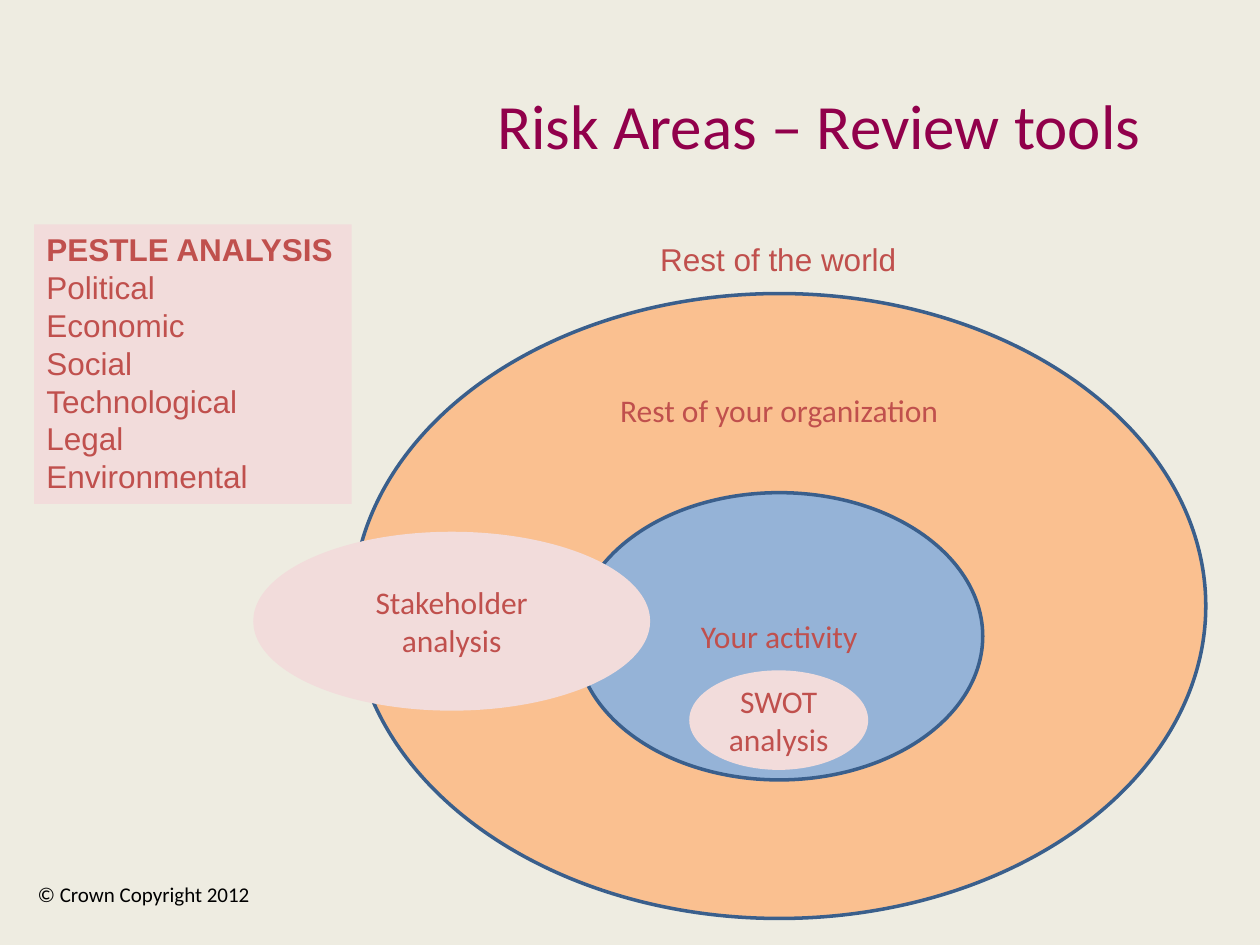
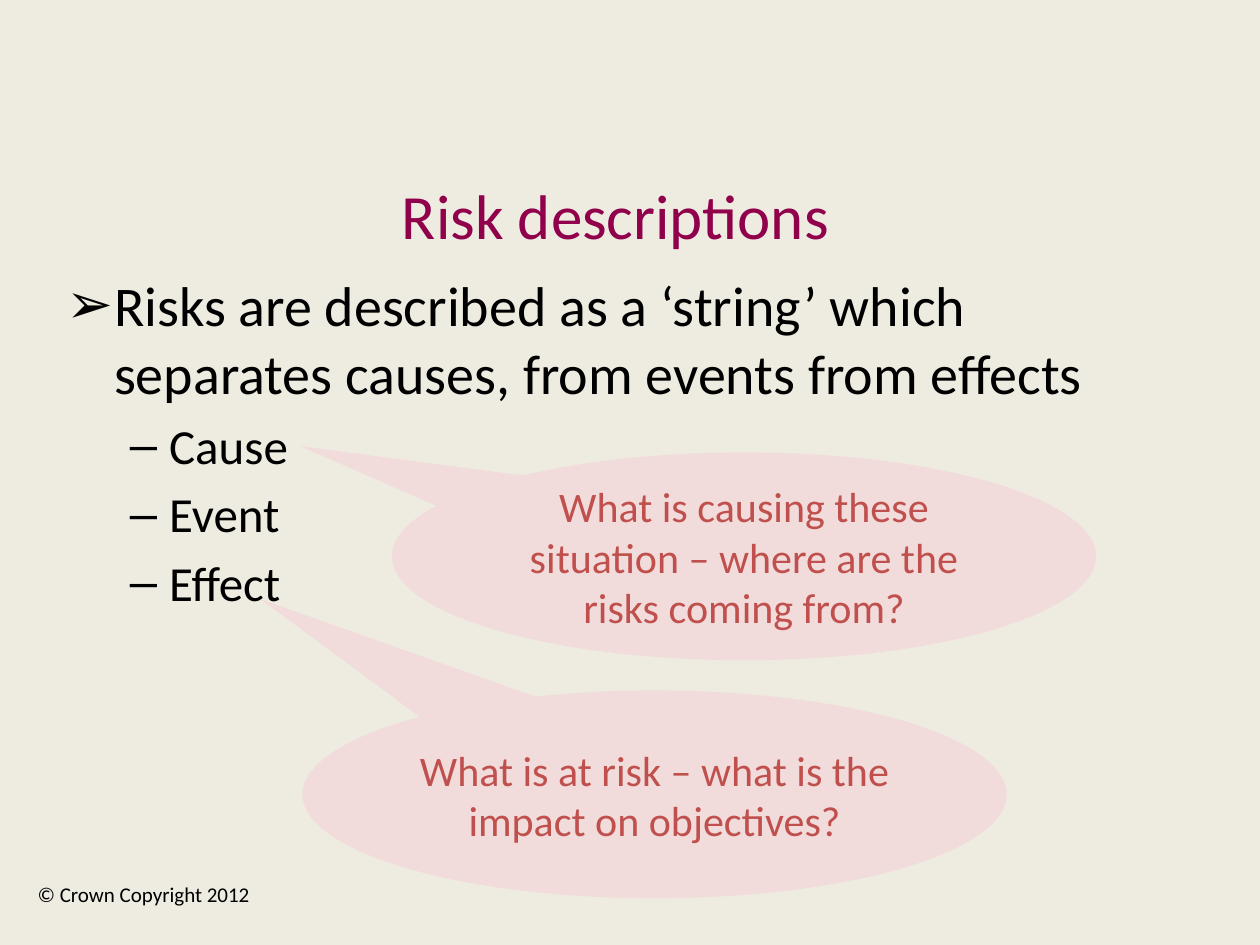
import lxml.etree
import pptx
import pptx.dml.color
import pptx.enum.shapes
import pptx.enum.text
import pptx.oxml.ns
import pptx.util

RGBColor = pptx.dml.color.RGBColor
Shape = pptx.enum.shapes.MSO_SHAPE
Align = pptx.enum.text.PP_ALIGN
Anchor = pptx.enum.text.MSO_ANCHOR

PX = 9144  # 100 px to the inch
CREAM = RGBColor(0xEE, 0xEC, 0xE1)
PLUM = RGBColor(0x91, 0x00, 0x4B)
BRICK = RGBColor(0xC0, 0x50, 0x4D)
PINK = RGBColor(0xF2, 0xDC, 0xDB)
ORANGE = RGBColor(0xFA, 0xC0, 0x90)
BLUE = RGBColor(0x95, 0xB3, 0xD7)
NAVY = RGBColor(0x3A, 0x5F, 0x8C)
BLACK = RGBColor(0, 0, 0)


def write(box, lines, size, color, font="Calibri", align=Align.LEFT,
          anchor=Anchor.MIDDLE, wrap=True):
    """Fill a box with one paragraph per line, all in one style."""
    frame = box.text_frame
    frame.text = "\n".join(lines)
    frame.word_wrap = wrap
    frame.auto_size = pptx.enum.text.MSO_AUTO_SIZE.NONE
    frame.vertical_anchor = anchor
    for para in frame.paragraphs:
        para.alignment = align
        para.font.name = font
        para.font.size = pptx.util.Pt(size)
        para.font.color.rgb = color


def add_filled(page, kind, bounds, fill, outline=None):
    shape = page.shapes.add_shape(kind, *[n * PX for n in bounds])
    shape.shadow.inherit = False
    shape.fill.solid()
    shape.fill.fore_color.rgb = fill
    if outline is None:
        shape.line.fill.background()
    else:
        shape.line.color.rgb = outline
        shape.line.width = pptx.util.Pt(2)
    return shape


deck = pptx.Presentation()
deck.slide_width, deck.slide_height = 1000 * PX, 750 * PX
background = deck.slide_master.background.fill
background.solid()
background.fore_color.rgb = CREAM
content_layout, title_layout = deck.slide_layouts[1], deck.slide_layouts[5]

# Titles and copyright line
pages = []
for layout, title, bounds in [
    (title_layout, "Risk Areas – Review tools", (335, 28, 630, 142)),
    (content_layout, "Risk descriptions", (209, 115, 559, 110)),
]:
    page = deck.slides.add_slide(layout)
    heading = page.shapes.title
    heading.left, heading.top, heading.width, heading.height = [n * PX for n in bounds]
    write(heading, [title], 36, PLUM, align=Align.CENTER)
    copyright_box = page.shapes.add_textbox(20 * PX, 690 * PX, 233 * PX, 40 * PX)
    write(copyright_box, ["© Crown Copyright 2012"], 12, BLACK)
    pages.append(page)
tools_page, descriptions_page = pages

# Slide 1: nested risk areas with the tools that cover them
for label, bounds, fill, outline, anchor in [
    ("Rest of your organization", (280, 233, 677, 496), ORANGE, NAVY, Anchor.TOP),
    ("Your activity", (457, 391, 323, 228), BLUE, NAVY, Anchor.MIDDLE),
    ("Stakeholder analysis", (201, 422, 315, 142), PINK, None, Anchor.MIDDLE),
    ("SWOT analysis", (547, 532, 142, 79), PINK, None, Anchor.MIDDLE),
]:
    area = add_filled(tools_page, Shape.OVAL, bounds, fill, outline)
    write(area, [label], 18, BRICK, align=Align.CENTER, anchor=anchor)

world = tools_page.shapes.add_textbox(514 * PX, 186 * PX, 209 * PX, 40 * PX)
write(world, ["Rest of the world"], 18, BRICK, "Arial", anchor=Anchor.TOP, wrap=False)

pestle = add_filled(tools_page, Shape.RECTANGLE, (27, 178, 252, 222), PINK)
write(pestle, ["PESTLE ANALYSIS", "Political", "Economic", "Social",
               "Technological", "Legal", "Environmental"],
      18, BRICK, "Arial", anchor=Anchor.TOP)
pestle.text_frame.paragraphs[0].font.bold = True

# Slide 2: the parts of a risk description and the questions behind them
body = descriptions_page.placeholders[1]
body.left, body.top, body.width, body.height = [n * PX for n in (43, 210, 900, 495)]
write(body, ["Risks are described as a ‘string’ which separates causes, "
             "from events from effects", "Cause", "Event", "Effect"],
      28, BLACK, anchor=Anchor.TOP)
statement, *parts = body.text_frame.paragraphs
bullet = lxml.etree.Element(pptx.oxml.ns.qn("a:buChar"), char="➢")
statement._p.get_or_add_pPr().insert(0, bullet)
statement.space_before = pptx.util.Pt(0)
statement.font.size = pptx.util.Pt(32)
for para in parts:
    para.level = 1

for question, left, top, pointer in [
    ("What is at risk – what is the impact on objectives?", 240, 548, (-0.56, -0.94)),
    ("What is causing these situation – where are the risks coming from?",
     311, 359, (-0.63, -0.53)),
]:
    callout = add_filled(descriptions_page, Shape.OVAL_CALLOUT, (left, top, 559, 165), PINK)
    callout.adjustments[0], callout.adjustments[1] = pointer
    write(callout, [question], 24, BRICK, align=Align.CENTER)

deck.save("out.pptx")
